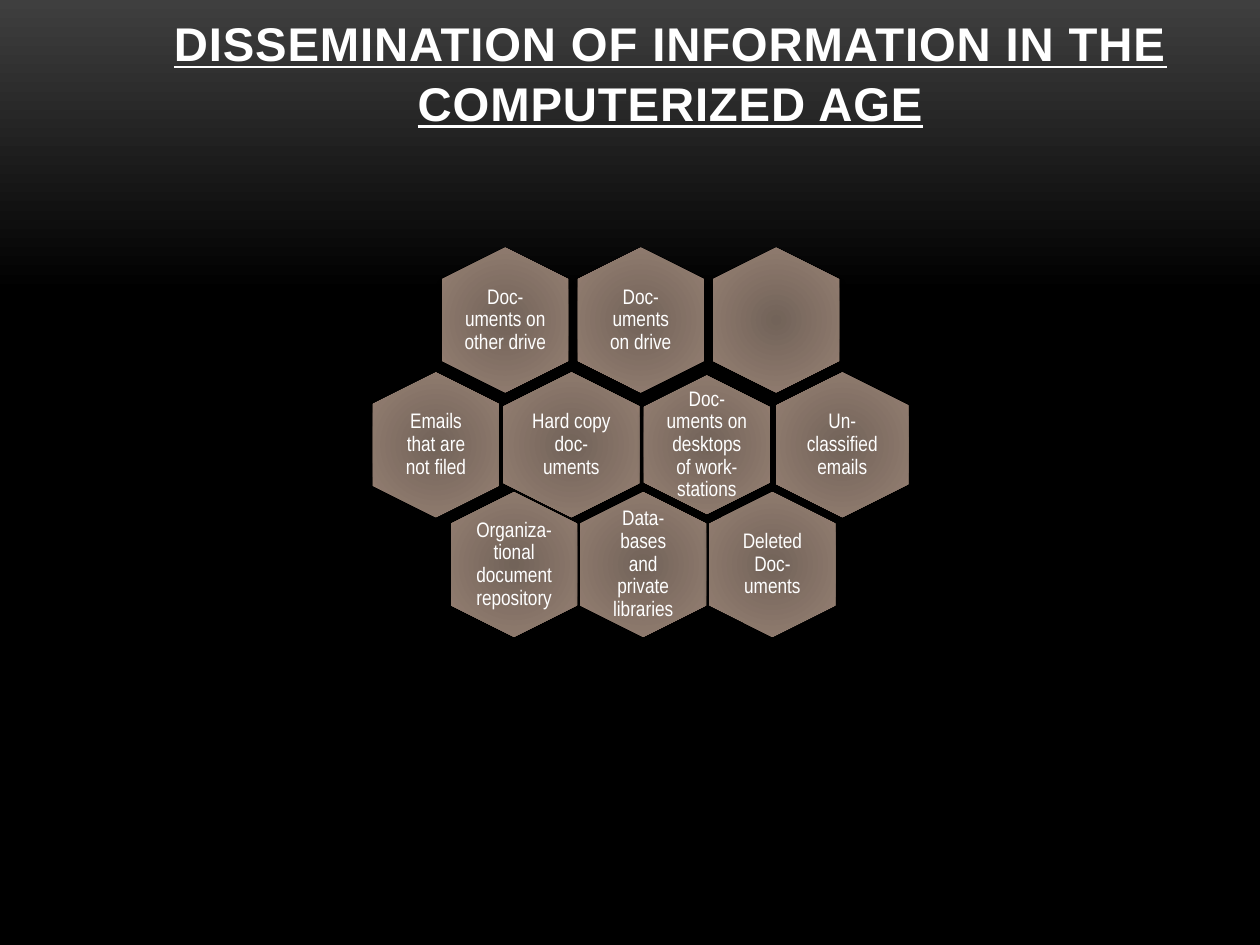
from lxml import etree
from pptx import Presentation
from pptx.dml.color import RGBColor
from pptx.enum.shapes import MSO_SHAPE
from pptx.enum.text import MSO_ANCHOR, MSO_AUTO_SIZE, PP_ALIGN
from pptx.oxml import parse_xml
from pptx.oxml.ns import nsdecls, qn
from pptx.util import Inches, Pt

COLOURS = {"white": "FFFFFF", "black": "000000", "charcoal": "3F3F3F",
           "core": "726359", "rim": "988274"}


def set_gradient(root, stops, direction):
    """Give the gradient fill inside root its stops (percent, colour) and direction."""
    gradient = root.find(".//" + qn("a:gradFill"))
    for child in list(gradient):
        gradient.remove(child)
    stop_list = etree.SubElement(gradient, qn("a:gsLst"))
    for percent, colour in stops:
        stop = etree.SubElement(stop_list, qn("a:gs"), pos=str(percent * 1000))
        etree.SubElement(stop, qn("a:srgbClr"), val=COLOURS[colour])
    gradient.append(parse_xml(direction.format(nsdecls("a"))))


def style_text(paragraph, font_name, size):
    paragraph.alignment = PP_ALIGN.CENTER
    paragraph.font.name = font_name
    paragraph.font.size = Pt(size)
    paragraph.font.color.rgb = RGBColor.from_string(COLOURS["white"])


deck = Presentation()
deck.slide_width, deck.slide_height = Inches(10), Inches(7.5)
page = deck.slides.add_slide(deck.slide_layouts[5])

# Background fading from charcoal to black
page.background.fill.gradient()
set_gradient(page._element, [(0, "charcoal"), (31, "black"), (100, "black")],
             '<a:lin {} ang="5400000" scaled="0"/>')

# Title
title = page.shapes.title
title.left, title.top = Inches(1.01), Inches(0.48)
title.width, title.height = Inches(8.62), Inches(0.61)
frame = title.text_frame
frame.text = "DISSEMINATION OF INFORMATION IN THE COMPUTERIZED AGE"
frame.word_wrap = True
frame.auto_size = MSO_AUTO_SIZE.NONE
frame.vertical_anchor = MSO_ANCHOR.BOTTOM
heading = frame.paragraphs[0]
style_text(heading, "Arial", 27)
heading.line_spacing = 1.05
heading.font.bold = heading.font.underline = True
heading.runs[0].font._element.set("spc", "50")

# Honeycomb rows: first centre x, pitch, centre y, cells
# Each cell: label, text inset, hexagon length (upright), hexagon breadth
ROWS = [
    (4.01, 1.075, 2.54, [
        ("Doc-uments on other drive", 0, 1.15, 1),
        ("Doc-uments on drive", 0.05, 1.15, 1),
        ("", 0, 1.15, 1)]),
    (3.46, 1.075, 3.53, [
        ("Emails that are not filed", 0.05, 1.15, 1),
        ("Hard copy doc-uments", 0.05, 1.15, 1.08),
        ("Doc-uments on desktops of work-stations", 0, 1.1, 1),
        ("Un-classified emails", 0, 1.15, 1.05)]),
    (4.08, 1.025, 4.48, [
        ("Organiza-tional document repository", 0, 1.15, 1),
        ("Data-bases and private libraries", 0.05, 1.15, 1),
        ("Deleted Doc-uments", 0.05, 1.15, 1)]),
]
TEXT_SHARE = 0.69  # part of a hexagon that its label may fill
SHADOW = ('<a:outerShdw {} blurRad="50800" dist="43180" dir="5400000" rotWithShape="0">'
          '<a:srgbClr val="{}"><a:alpha val="40000"/></a:srgbClr></a:outerShdw>')

honeycomb = page.shapes.add_group_shape()
for first_x, pitch, centre_y, cells in ROWS:
    for column, (label, inset, length, breadth) in enumerate(cells):
        centre_x = first_x + column * pitch

        # Hexagon turned to stand on its point
        hexagon = honeycomb.shapes.add_shape(
            MSO_SHAPE.HEXAGON, Inches(centre_x - length / 2),
            Inches(centre_y - breadth / 2), Inches(length), Inches(breadth))
        hexagon.rotation = 90
        hexagon.line.fill.background()
        hexagon.fill.gradient()
        set_gradient(hexagon._element, [(0, "core"), (100, "rim")],
                     '<a:path {} path="circle"><a:fillToRect l="100000" t="100000" '
                     'r="100000" b="100000"/></a:path>')
        hexagon.shadow.inherit = False
        effects = hexagon._element.spPr.find(qn("a:effectLst"))
        effects.append(parse_xml(SHADOW.format(nsdecls("a"), COLOURS["black"])))
        if not label:
            continue

        # Upright label at the hexagon's centre
        width, height = breadth * TEXT_SHARE, length * TEXT_SHARE
        box = honeycomb.shapes.add_textbox(
            Inches(centre_x - width / 2), Inches(centre_y - height / 2),
            Inches(width), Inches(height))
        frame = box.text_frame
        frame.word_wrap = True
        frame.vertical_anchor = MSO_ANCHOR.MIDDLE
        frame.margin_left = frame.margin_right = Inches(inset)
        frame.margin_top = frame.margin_bottom = Inches(inset)
        frame.text = label
        style_text(frame.paragraphs[0], "Arial Narrow", 12)
        frame.paragraphs[0].line_spacing = 0.9

deck.save("out.pptx")
